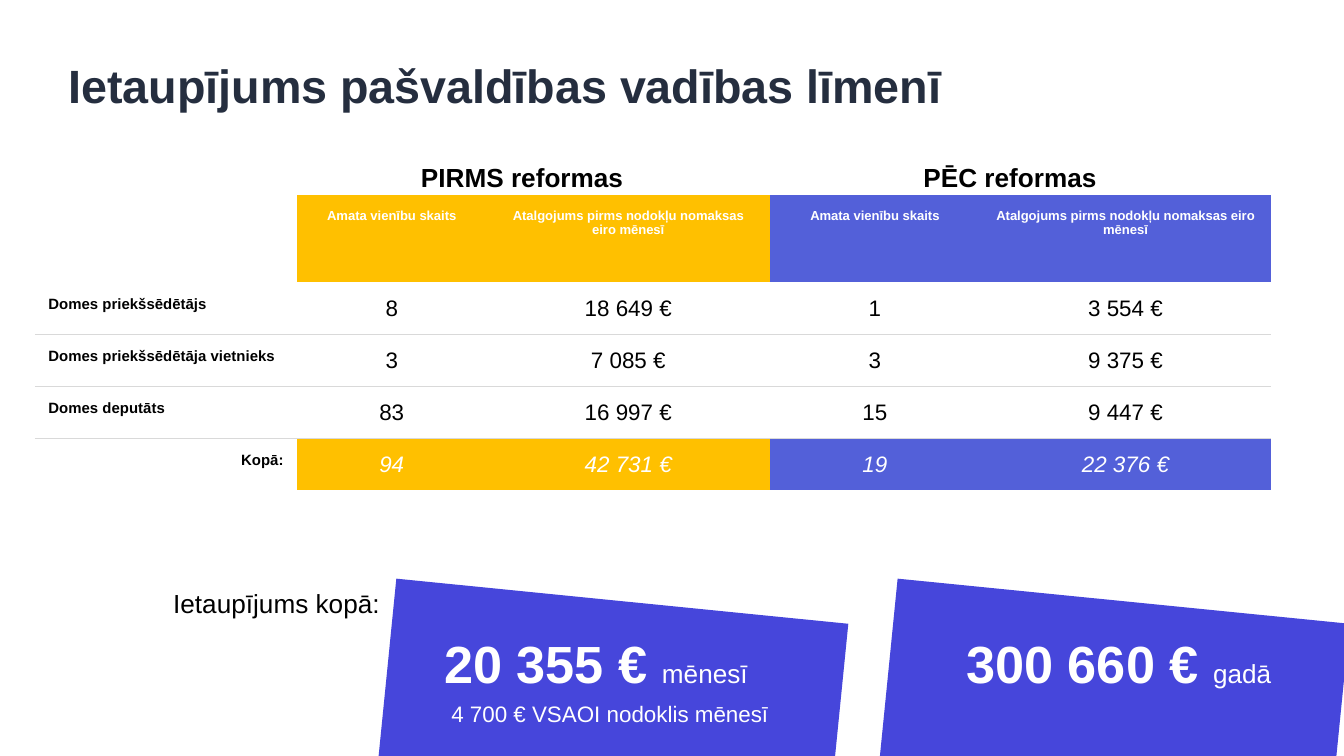
"""Build the slide comparing council leadership pay before and after the reform."""
from dataclasses import dataclass
from typing import Optional

import lxml.etree
import pptx
import pptx.dml.color
import pptx.enum.shapes
import pptx.enum.text
import pptx.oxml
import pptx.oxml.ns
import pptx.util

Color = pptx.dml.color.RGBColor
Align = pptx.enum.text.PP_ALIGN
AutoSize = pptx.enum.text.MSO_AUTO_SIZE
qn = pptx.oxml.ns.qn

NAVY = Color(0x25, 0x2E, 0x3F)
BLACK = Color(0x00, 0x00, 0x00)
WHITE = Color(0xFF, 0xFF, 0xFF)
YELLOW = Color(0xFF, 0xC0, 0x00)
BLUE = Color(0x53, 0x60, 0xD9)
INDIGO = Color(0x46, 0x46, 0xDB)
RULE = Color(0xD9, 0xD9, 0xD9)

FONT = "Arial"
EMU_PER_PX = 9144
NO_STYLE = "{2D5ABB26-0587-4C30-8999-92F81FD0307C}"
COLUMN_WIDTHS = (195, 141, 211, 156, 217)
ROW_HEIGHTS = (65, 32, 36, 33, 33, 43)
COLUMN_FILLS = (None, YELLOW, YELLOW, BLUE, BLUE)
TOTAL_ROW = 4
HEADINGS = ("Amata vienību skaits", "Atalgojums pirms nodokļu nomaksas eiro mēnesī")
ROWS = (
    ("",) + HEADINGS * 2,
    ("Domes priekšsēdētājs", "8", "18 649 €", "1", "3 554 €"),
    ("Domes priekšsēdētāja vietnieks", "3", "7 085 €", "3", "9 375 €"),
    ("Domes deputāts", "83", "16 997 €", "15", "9 447 €"),
    ("Kopā:", "94", "42 731 €", "19", "22 376 €"),
    ("",) * 5,
)


@dataclass(frozen=True)
class Span:
    text: str
    size: int
    color: Color = BLACK
    bold: bool = False
    italic: bool = False


@dataclass(frozen=True)
class Label:
    left: int
    top: int
    width: int
    height: int
    spans: tuple[Span, ...]
    align: Align = Align.CENTER


def amount(value: str, period: str) -> tuple[Span, ...]:
    """Return a large sum followed by its period."""
    return Span(f"{value} € ", 28, WHITE, True), Span(period, 14, WHITE)


PANEL_LEFTS = (660, 287)
LABELS = (
    Label(301, 110, 175, 44, (Span("PIRMS reformas", 14, bold=True),)),
    Label(664, 110, 175, 44, (Span("PĒC reformas", 14, bold=True),)),
    Label(669, 460, 327, 67, amount("300 660", "gadā")),
    Label(315, 460, 257, 67, amount("20 355", "mēnesī")),
    Label(119, 427, 196, 44, (Span("Ietaupījums kopā:", 14),), Align.LEFT),
    Label(326, 511, 327, 40, (Span("4 700 € VSAOI nodoklis mēnesī", 12, WHITE),), Align.LEFT),
)


def px(value: int) -> pptx.util.Emu:
    """Turn px into EMU."""
    return pptx.util.Emu(value * EMU_PER_PX)


def write(frame: pptx.text.text.TextFrame, spans: tuple[Span, ...], align: Align, inset: int = 10) -> None:
    """Write one paragraph of spans with equal insets."""
    frame.margin_left = frame.margin_right = px(inset)
    frame.margin_top = frame.margin_bottom = px(inset)
    frame.word_wrap = True
    para = frame.paragraphs[0]
    para.alignment = align
    for item in spans:
        span = para.add_run()
        span.text = item.text
        span.font.name = FONT
        span.font.size = pptx.util.Pt(item.size)
        span.font.bold = item.bold
        span.font.italic = item.italic
        span.font.color.rgb = item.color


def add_title(page: pptx.slide.Slide) -> None:
    """Fill the title placeholder."""
    title = page.shapes.title
    title.left, title.top, title.width, title.height = map(px, (51, 39, 851, 50))
    frame = title.text_frame
    write(frame, (Span("Ietaupījums pašvaldības vadības līmenī", 25, NAVY, True),), Align.LEFT, 0)
    frame.auto_size = AutoSize.NONE
    frame.vertical_anchor = pptx.enum.text.MSO_ANCHOR.TOP
    frame.paragraphs[0].line_spacing = 1.08


def add_border(cell: pptx.table._Cell, side: str, color: Optional[Color]) -> None:
    """Draw a hairline on one side of a cell, or clear that side."""
    line = lxml.etree.Element(qn(f"a:{side}"), w=str(pptx.util.Pt(0.25)))
    if color is None:
        lxml.etree.SubElement(line, qn("a:noFill"))
    else:
        fill = lxml.etree.SubElement(line, qn("a:solidFill"))
        lxml.etree.SubElement(fill, qn("a:srgbClr"), val=str(color))
    cell._tc.get_or_add_tcPr().insert(0, line)


def cell_span(text: str, row: int, column: int) -> Span:
    """Choose the text format for a table position."""
    if row == 0:
        return Span(text, 7, WHITE, bold=True)
    if column == 0:
        return Span(text, 8, bold=True)
    total = row == TOTAL_ROW
    return Span(text, 12, WHITE if total else BLACK, italic=total)


def add_pay_table(page: pptx.slide.Slide) -> None:
    """Add the table of posts and pay."""
    holder = page.shapes.add_table(
        len(ROWS), len(COLUMN_WIDTHS), px(26), px(145), px(sum(COLUMN_WIDTHS)), px(sum(ROW_HEIGHTS))
    )
    table = holder.table
    table.first_row = table.horz_banding = False
    table._tbl.tblPr.find(qn("a:tableStyleId")).text = NO_STYLE
    for column, width in zip(table.columns, COLUMN_WIDTHS):
        column.width = px(width)
    for row, height in zip(table.rows, ROW_HEIGHTS):
        row.height = px(height)
    for r, texts in enumerate(ROWS):
        for c, text in enumerate(texts):
            cell = table.cell(r, c)
            cell.margin_left = cell.margin_right = px(10)
            cell.margin_top = cell.margin_bottom = px(10)
            if r in (0, TOTAL_ROW) and COLUMN_FILLS[c]:
                cell.fill.solid()
                cell.fill.fore_color.rgb = COLUMN_FILLS[c]
            else:
                cell.fill.background()
            add_border(cell, "lnB", RULE if 1 <= r < TOTAL_ROW else None)
            add_border(cell, "lnT", RULE if 1 < r <= TOTAL_ROW else None)
            if text:
                first = Align.RIGHT if r == TOTAL_ROW else Align.LEFT
                write(cell.text_frame, (cell_span(text, r, c),), Align.CENTER if c else first)


def add_panel(page: pptx.slide.Slide, left: int) -> None:
    """Add a tilted panel behind a saving."""
    panel = page.shapes.add_shape(
        pptx.enum.shapes.MSO_SHAPE.RECTANGLE, px(left), px(447), px(338), px(142)
    )
    panel.rotation = 5.7
    panel.shadow.inherit = False
    panel.fill.solid()
    panel.fill.fore_color.rgb = INDIGO
    panel.line.fill.background()


def add_label(page: pptx.slide.Slide, label: Label) -> None:
    """Add a text box."""
    box = page.shapes.add_textbox(px(label.left), px(label.top), px(label.width), px(label.height))
    write(box.text_frame, label.spans, label.align)
    box.text_frame.auto_size = AutoSize.SHAPE_TO_FIT_TEXT


def main() -> None:
    """Build and save the deck."""
    deck = pptx.Presentation()
    deck.slide_width = px(1000)
    deck.slide_height = deck.slide_width * 9 // 16
    page = deck.slides.add_slide(deck.slide_layouts[5])
    add_title(page)
    add_pay_table(page)
    for left in PANEL_LEFTS:
        add_panel(page, left)
    for label in LABELS:
        add_label(page, label)
    deck.save("out.pptx")


if __name__ == "__main__":
    main()
